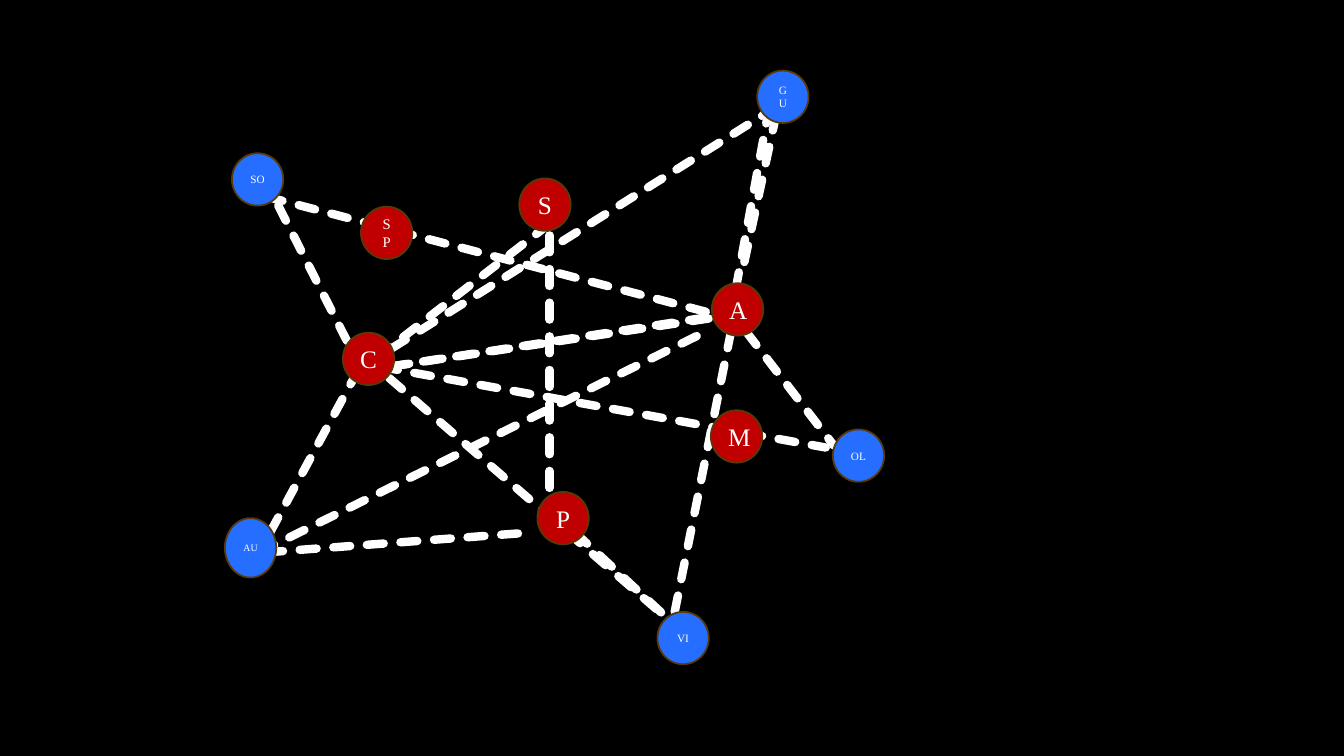
from lxml.etree import SubElement
from pptx import Presentation
from pptx.dml.color import RGBColor
from pptx.enum.dml import MSO_LINE
from pptx.enum.shapes import MSO_CONNECTOR, MSO_SHAPE
from pptx.enum.text import MSO_ANCHOR, PP_ALIGN
from pptx.oxml.ns import qn
from pptx.util import Inches, Pt

BLACK = RGBColor(0x00, 0x00, 0x00)
WHITE = RGBColor(0xFF, 0xFF, 0xFF)
RED = RGBColor(0xC0, 0x00, 0x00)
BLUE = RGBColor(0x25, 0x6E, 0xFF)
BROWN = RGBColor(0x59, 0x39, 0x06)

NODE_WIDTH, NODE_HEIGHT = 0.51, 0.52
STACKED_LABELS = ("SP", "GU")  # narrow text area: one letter per line

# start x, start y, end x, end y
LINKS = [
    (7.7, 1.06, 3.72, 3.56),
    (7.7, 1.13, 7.35, 2.75),
    (3.86, 3.75, 6.67, 6.18),
    (3.78, 3.64, 8.19, 4.44),
    (7.03, 3.16, 3.85, 3.64),
    (2.57, 5.48, 7, 3.29),
    (2.64, 1.95, 7.18, 3.14),
    (7.63, 1.06, 7.22, 3.29),
    (7.25, 3.29, 6.67, 6.18),
    (7.4, 3.29, 8.27, 4.42),
    (7, 3.15, 3.85, 3.64),
    (5.45, 2.22, 3.72, 3.56),
    (5.7, 5.28, 6.67, 6.18),
    (5.45, 4.84, 5.45, 2.22),
    (2.64, 5.48, 5.3, 5.28),
    (2.68, 5.28, 3.57, 3.64),
    (2.76, 2.04, 3.45, 3.4),
]

# label, left, top, height, fill, font size
NODES = [
    ("C", 3.4, 3.3, NODE_HEIGHT, RED, 18),
    ("SP", 3.58, 2.05, NODE_HEIGHT, RED, 10.5),
    ("SO", 2.3, 1.52, NODE_HEIGHT, BLUE, 8),
    ("AU", 2.23, 5.14, 0.59, BLUE, 7),
    ("S", 5.15, 1.77, NODE_HEIGHT, RED, 18),
    ("P", 5.33, 4.88, NODE_HEIGHT, RED, 18),
    ("OL", 8.26, 4.26, NODE_HEIGHT, BLUE, 8),
    ("A", 7.06, 2.81, NODE_HEIGHT, RED, 18),
    ("M", 7.05, 4.07, NODE_HEIGHT, RED, 18),
    ("GU", 7.51, 0.7, NODE_HEIGHT, BLUE, 8),
    ("VI", 6.52, 6.07, NODE_HEIGHT, BLUE, 8),
]

presentation = Presentation()
presentation.slide_width = Inches(13.33)
presentation.slide_height = Inches(7.5)
slide = presentation.slides.add_slide(presentation.slide_layouts[6])
slide.background.fill.solid()
slide.background.fill.fore_color.rgb = BLACK

for link in LINKS:
    connector = slide.shapes.add_connector(MSO_CONNECTOR.STRAIGHT, *map(Inches, link))
    connector.line.color.rgb = WHITE
    connector.line.width = Pt(6)
    connector.line.dash_style = MSO_LINE.SQUARE_DOT
    properties = connector._element.spPr
    outline = properties.find(qn("a:ln"))
    outline.set("cap", "rnd")
    outline.find(qn("a:prstDash")).set("val", "sysDash")
    SubElement(properties, qn("a:effectLst"))

for label, left, top, height, color, size in NODES:
    node = slide.shapes.add_shape(
        MSO_SHAPE.OVAL, Inches(left), Inches(top), Inches(NODE_WIDTH), Inches(height)
    )
    node.shadow.inherit = False
    node.fill.solid()
    node.fill.fore_color.rgb = color
    node.line.color.rgb = BROWN
    node.line.width = Pt(1.25)
    side_margin = Inches(0.12 if label in STACKED_LABELS else 0.1)
    frame_format = {
        "word_wrap": True,
        "vertical_anchor": MSO_ANCHOR.MIDDLE,
        "margin_left": side_margin,
        "margin_right": side_margin,
    }
    for name, value in frame_format.items():
        setattr(node.text_frame, name, value)
    paragraph = node.text_frame.paragraphs[0]
    paragraph.alignment = PP_ALIGN.CENTER
    run = paragraph.add_run()
    run.text = label
    for name, value in {"name": "Times New Roman", "size": Pt(size)}.items():
        setattr(run.font, name, value)
    run.font.color.rgb = WHITE

presentation.save("out.pptx")
